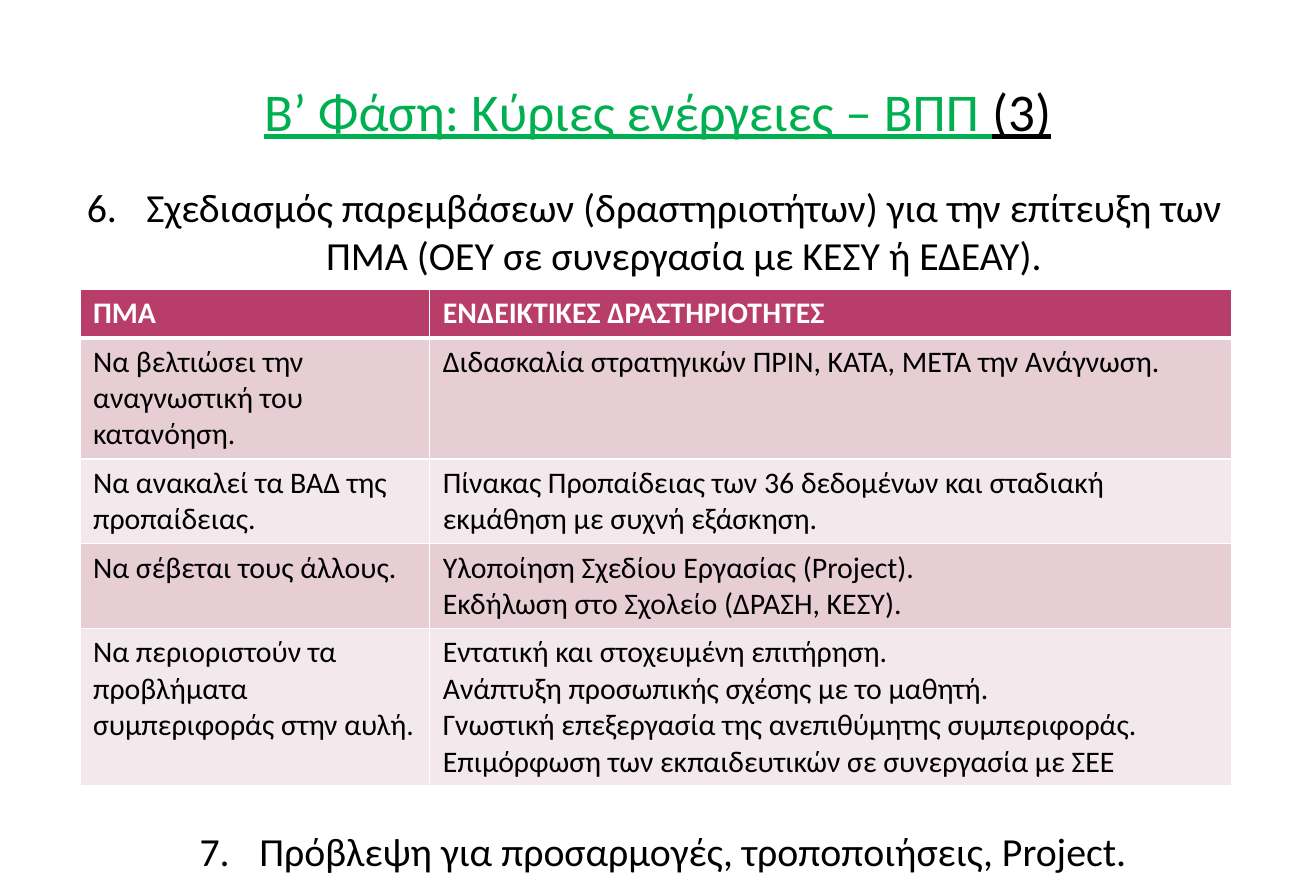
from lxml.etree import SubElement
from pptx import Presentation
from pptx.dml.color import RGBColor
from pptx.enum.text import MSO_ANCHOR, MSO_AUTO_SIZE, PP_ALIGN
from pptx.oxml.ns import qn
from pptx.util import Inches, Pt

COLORS = {
    "green": "00B050",
    "black": "000000",
    "white": "FFFFFF",
    "head": "B83D68",
    "dark": "E6CED4",
    "light": "F3E8EB",
}
HEADS = ("ΠΜΑ", "ΕΝΔΕΙΚΤΙΚΕΣ ΔΡΑΣΤΗΡΙΟΤΗΤΕΣ")
GOALS = [
    ("Να βελτιώσει την αναγνωστική του κατανόηση.",
     "Διδασκαλία στρατηγικών ΠΡΙΝ, ΚΑΤΑ, ΜΕΤΑ την Ανάγνωση."),
    ("Να ανακαλεί τα ΒΑΔ της προπαίδειας.",
     "Πίνακας Προπαίδειας των 36 δεδομένων και σταδιακή εκμάθηση με συχνή εξάσκηση."),
    ("Να σέβεται τους άλλους.",
     "Υλοποίηση Σχεδίου Εργασίας (Project).\n"
     "Εκδήλωση στο Σχολείο (ΔΡΑΣΗ, ΚΕΣΥ)."),
    ("Να περιοριστούν τα προβλήματα συμπεριφοράς στην αυλή.",
     "Εντατική και στοχευμένη επιτήρηση.\n"
     "Ανάπτυξη προσωπικής σχέσης με το μαθητή.\n"
     "Γνωστική επεξεργασία της ανεπιθύμητης συμπεριφοράς.\n"
     "Επιμόρφωση των εκπαιδευτικών σε συνεργασία με ΣΕΕ"),
]


def color(name):
    return RGBColor.from_string(COLORS[name])


def place(shape, left, top, width, height):
    shape.left, shape.top = Inches(left), Inches(top)
    shape.width, shape.height = Inches(width), Inches(height)


def style(font, size, tint):
    font.name = "Calibri"
    font.size = Pt(size)
    font.color.rgb = color(tint)


def add_title(slide):
    title = slide.shapes.title
    place(title, 0.55, 0.3, 9.92, 1.25)
    frame = title.text_frame
    frame.auto_size = MSO_AUTO_SIZE.NONE
    frame.vertical_anchor = MSO_ANCHOR.MIDDLE
    line = frame.paragraphs[0]
    line.alignment = PP_ALIGN.CENTER
    style(line.font, 32, "green")
    line.font.underline = True
    line.add_run().text = "Β’ Φάση: Κύριες ενέργειες – ΒΠΠ "
    count = line.add_run()
    count.text = "(3)"
    count.font.color.rgb = color("black")


def fill_step(shape, number, text):
    frame = shape.text_frame
    frame.word_wrap = True
    frame.auto_size = MSO_AUTO_SIZE.NONE
    frame.text = text
    line = frame.paragraphs[0]
    line.alignment = PP_ALIGN.CENTER
    props = line._p.get_or_add_pPr()
    props.set("marL", str(Inches(0.5)))
    props.set("indent", str(Inches(-0.5)))
    SubElement(props, qn("a:buFont"), typeface="+mj-lt")
    SubElement(props, qn("a:buAutoNum"), type="arabicPeriod", startAt=str(number))
    style(line.font, 24, "black")


def add_edges(cell, widths):
    props = cell._tc.get_or_add_tcPr()
    for side, width in zip("LRTB", widths):
        edge = SubElement(props, qn(f"a:ln{side}"), w=str(Pt(width)))
        fill = SubElement(edge, qn("a:solidFill"))
        SubElement(fill, qn("a:srgbClr"), val=COLORS["white"])


def fill_cell(cell, text, tint, fill, bold):
    cell.fill.solid()
    cell.fill.fore_color.rgb = color(fill)
    cell.margin_left = cell.margin_right = Inches(0.11)
    cell.text = text
    for line in cell.text_frame.paragraphs:
        style(line.font, 18, tint)
        line.font.bold = bold


def add_goals(slide):
    rows = [HEADS] + GOALS
    frame = slide.shapes.add_table(
        len(rows), len(HEADS), Inches(0.67), Inches(2.42),
        Inches(9.65), Inches(4.11))
    table = frame.table
    for column, width in zip(table.columns, (2.93, 6.72)):
        column.width = Inches(width)
    for index, texts in enumerate(rows):
        table.rows[index].height = Inches(0.41)
        for col, text in enumerate(texts):
            cell = table.cell(index, col)
            if index == 0:
                add_edges(cell, (1, 1, 1, 3))
                fill_cell(cell, text, "white", "head", True)
            else:
                add_edges(cell, (1, 1, 3 if index == 1 else 1, 1))
                fill = "dark" if index % 2 else "light"
                fill_cell(cell, text, "black", fill, False)
    frame.height = Inches(4.11)


def main():
    deck = Presentation()
    deck.slide_width = Inches(11.024)
    deck.slide_height = Inches(7.5)
    slide = deck.slides.add_slide(deck.slide_layouts[1])
    add_title(slide)
    body = slide.placeholders[1]
    place(body, 0.52, 1.48, 9.92, 1.14)
    fill_step(body, 6, "Σχεδιασμός παρεμβάσεων (δραστηριοτήτων) για την επίτευξη "
                       "των ΠΜΑ (ΟΕΥ σε συνεργασία με ΚΕΣΥ ή ΕΔΕΑΥ).")
    add_goals(slide)
    note = slide.shapes.add_textbox(
        Inches(0.67), Inches(6.88), Inches(9.77), Inches(0.5))
    fill_step(note, 7, "Πρόβλεψη για προσαρμογές, τροποποιήσεις, Project.")
    deck.save("out.pptx")


if __name__ == "__main__":
    main()
